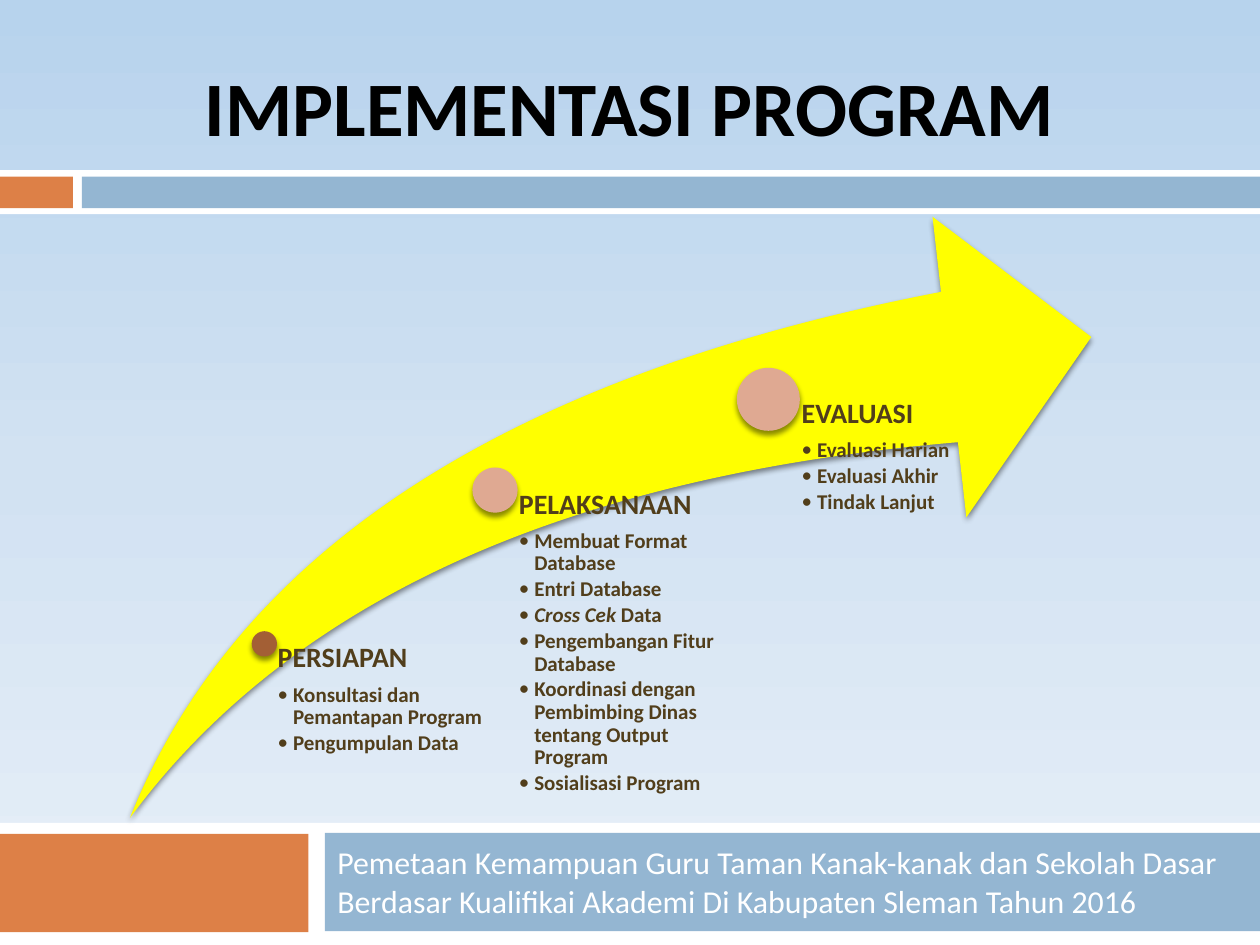
from copy import deepcopy

from lxml.etree import SubElement
from pptx import Presentation
from pptx.dml.color import RGBColor
from pptx.enum.shapes import MSO_SHAPE
from pptx.enum.text import MSO_ANCHOR, PP_ALIGN
from pptx.oxml.ns import qn
from pptx.util import Cm, Pt

FONT = "Calibri"
COLORS = {
    "sky_top": "B7D3ED", "sky_middle": "D2E2F2", "sky_bottom": "E8F0F8",
    "white": "FFFFFF", "black": "000000", "orange": "DD8047", "blue": "94B6D2",
    "yellow": "FFFF00", "brown": "A35F35", "pink": "DFA992", "text": "513E1B",
}
BARS = [
    ("white", 0, 3.43, 25.4, 0.89),
    ("orange", 0, 3.56, 1.47, 0.64),
    ("blue", 1.65, 3.56, 23.75, 0.64),
    ("white", 0, 16.59, 25.4, 2.46),
    ("orange", -0.03, 16.81, 6.25, 1.98),
    ("blue", 6.55, 16.79, 18.85, 1.98),
]
STAGES = [
    ("PERSIAPAN", "brown", 5.33, 12.98, 0.51, 4.52,
     ["Konsultasi dan Pemantapan Program", "Pengumpulan Data"]),
    ("PELAKSANAAN", "pink", 9.98, 9.88, 0.91, 4.65,
     ["Membuat Format Database", "Entri Database", "*Cross Cek *Data",
      "Pengembangan Fitur Database",
      "Koordinasi dengan Pembimbing Dinas tentang Output Program",
      "Sosialisasi Program"]),
    ("EVALUASI", "pink", 15.49, 8.05, 1.27, 4.65,
     ["Evaluasi Harian", "Evaluasi Akhir", "Tindak Lanjut"]),
]
STAGE_BOTTOM = 16.48


def color(name):
    """Return the named colour."""
    return RGBColor.from_string(COLORS[name])


def paint_background(slide):
    """Fill the slide with a vertical gradient of three colours."""
    fill = slide.background.fill
    fill.gradient()
    fill.gradient_angle = 270
    stop_list = slide.element.find(".//" + qn("a:gsLst"))
    stop_list.append(deepcopy(stop_list[-1]))
    names = ("sky_top", "sky_middle", "sky_bottom")
    for stop, name, position in zip(fill.gradient_stops, names, (0, 0.5, 1)):
        stop.color.rgb = color(name)
        stop.position = position


def add_filled_shape(slide, kind, fill, left, top, width, height):
    """Add a flat shape without outline."""
    shape = slide.shapes.add_shape(kind, Cm(left), Cm(top), Cm(width), Cm(height))
    shape.fill.solid()
    shape.fill.fore_color.rgb = color(fill)
    shape.line.fill.background()
    shape.shadow.inherit = False
    return shape


def add_shadow(shape):
    """Give a shape a soft shadow below it."""
    effects = shape.element.spPr.find(qn("a:effectLst"))
    shadow = SubElement(effects, qn("a:outerShdw"), blurRad=str(Pt(3)),
                        dist=str(Pt(2.4)), dir="5400000", rotWithShape="0")
    tint = SubElement(shadow, qn("a:srgbClr"), val=COLORS["black"])
    SubElement(tint, qn("a:alpha"), val="45000")


def format_span(span, size, name, bold=False, italic=False):
    """Set the font of one run."""
    span.font.name = FONT
    span.font.size = Pt(size)
    span.font.color.rgb = color(name)
    span.font.bold = bold
    span.font.italic = italic


def set_title(slide, text):
    """Place and format the title placeholder."""
    title = slide.shapes.title
    title.left, title.top, title.width, title.height = Cm(0), Cm(0), Cm(25.4), Cm(3.18)
    title.text_frame.text = text
    title.text_frame.vertical_anchor = MSO_ANCHOR.BOTTOM
    para = title.text_frame.paragraphs[0]
    para.alignment = PP_ALIGN.CENTER
    format_span(para.runs[0], 44, "black", bold=True)


def add_subtitle(slide, text):
    """Add the programme name on the lower bar."""
    frame = slide.shapes.add_textbox(Cm(6.55), Cm(16.81), Cm(18.62), Cm(1.91)).text_frame
    frame.word_wrap = True
    frame.vertical_anchor = MSO_ANCHOR.MIDDLE
    frame.text = text
    format_span(frame.paragraphs[0].runs[0], 18.2, "white")


def add_bullet(para):
    """Give a paragraph a hanging bullet."""
    properties = para._p.get_or_add_pPr()
    properties.set("marL", str(Cm(0.31)))
    properties.set("indent", str(-Cm(0.31)))
    SubElement(properties, qn("a:buFont"), typeface=FONT)
    SubElement(properties, qn("a:buChar"), char="•")


def add_stage(slide, heading, fill, center_x, center_y, diameter, width, items):
    """Add a dot and the stage text that starts at its centre."""
    radius = diameter / 2
    dot = add_filled_shape(slide, MSO_SHAPE.OVAL, fill, center_x - radius,
                           center_y - radius, diameter, diameter)
    add_shadow(dot)
    box = slide.shapes.add_textbox(Cm(center_x), Cm(center_y), Cm(width),
                                   Cm(STAGE_BOTTOM - center_y))
    frame = box.text_frame
    frame.word_wrap = True
    frame.margin_left = Cm(diameter * 0.53)
    frame.margin_top = frame.margin_right = frame.margin_bottom = 0
    frame.text = heading
    title = frame.paragraphs[0]
    title.line_spacing = 0.9
    title.space_after = Pt(5.6)
    format_span(title.runs[0], 16, "text", bold=True)
    for item in items:
        para = frame.add_paragraph()
        para.level = 1
        para.line_spacing = 0.9
        para.space_after = Pt(1.8)
        add_bullet(para)
        for index, part in enumerate(item.split("*")):
            if part:
                span = para.add_run()
                span.text = part
                format_span(span, 12, "text", bold=True, italic=index % 2 == 1)


def main():
    """Build the slide and save the deck."""
    deck = Presentation()
    deck.slide_width, deck.slide_height = Cm(25.4), Cm(19.05)
    slide = deck.slides.add_slide(deck.slide_layouts[5])
    paint_background(slide)
    for fill, *place in BARS:
        add_filled_shape(slide, MSO_SHAPE.RECTANGLE, fill, *place)
    set_title(slide, "IMPLEMENTASI PROGRAM")
    add_subtitle(slide, "Pemetaan Kemampuan Guru Taman Kanak-kanak dan Sekolah Dasar "
                        "Berdasar Kualifikai Akademi Di Kabupaten Sleman Tahun 2016")
    arrow = add_filled_shape(slide, MSO_SHAPE.SWOOSH_ARROW, "yellow",
                             2.62, 4.37, 19.38, 12.12)
    arrow.adjustments[0] = arrow.adjustments[1] = 0.25
    add_shadow(arrow)
    for stage in STAGES:
        add_stage(slide, *stage)
    deck.save("out.pptx")


if __name__ == "__main__":
    main()
